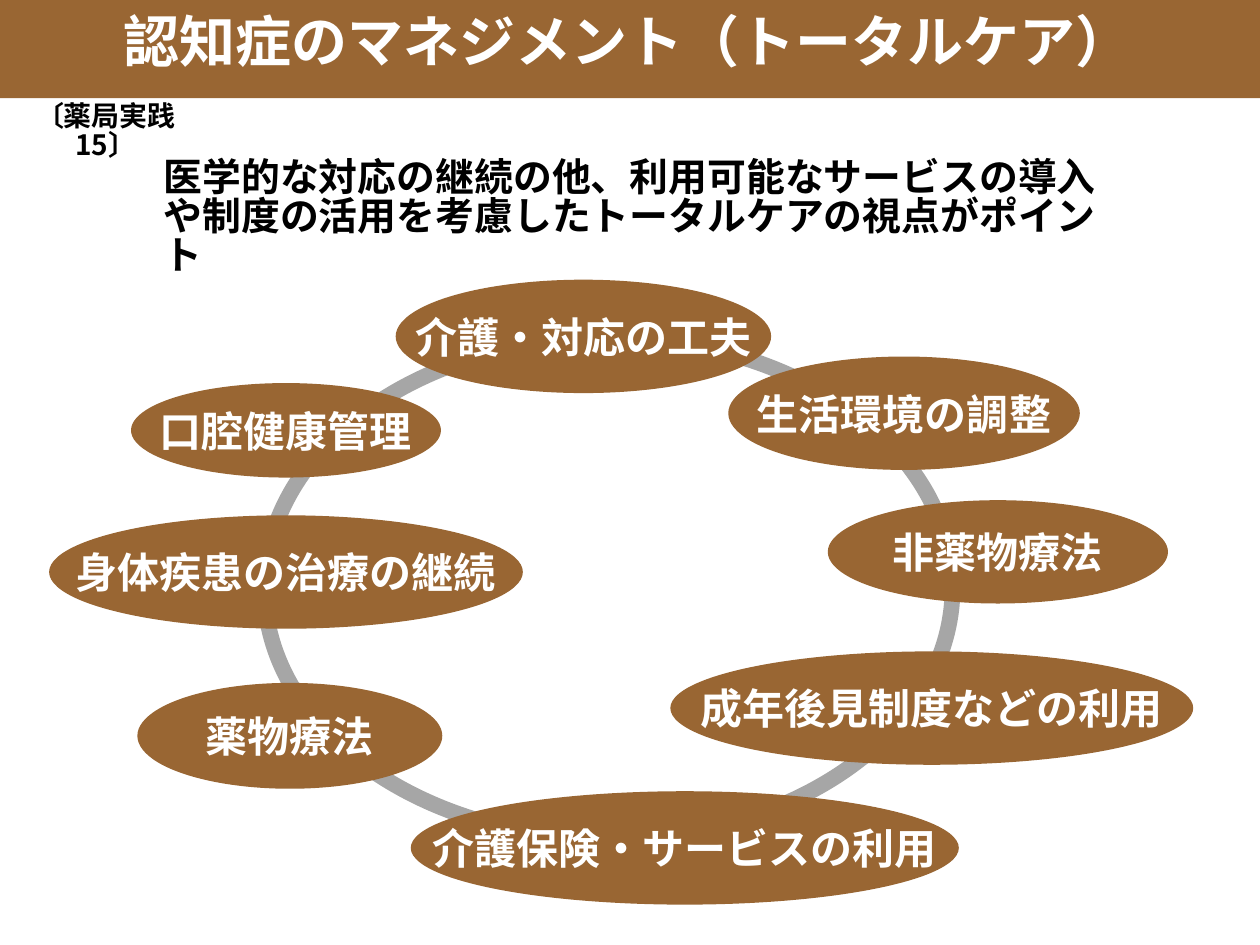
"""Build the dementia total care slide."""
from lxml.etree import SubElement
from pptx import Presentation
from pptx.dml.color import RGBColor
from pptx.enum.shapes import MSO_SHAPE
from pptx.enum.text import MSO_ANCHOR, MSO_AUTO_SIZE, PP_ALIGN
from pptx.oxml.ns import qn
from pptx.util import Inches, Pt

FONT = "Noto Sans CJK JP"
COLORS = {"brown": "996633", "gray": "A6A6A6", "white": "FFFFFF", "black": "000000"}
TITLE = "認知症のマネジメント（トータルケア）"
TAG = "〔薬局実践15〕"
LEAD = "医学的な対応の継続の他、利用可能なサービスの導入や制度の活用を考慮したトータルケアの視点がポイント"
BAND = (0, 0, 10, 0.78)
RING = (2.1, 2.68, 5.46, 3.98)
CARE = [
    ("生活環境の調整", (5.78, 2.83, 2.79, 0.9)),
    ("薬物療法", (1.09, 5.42, 2.42, 0.84)),
    ("介護保険・サービスの利用", (3.26, 6.28, 4.35, 0.9)),
    ("非薬物療法", (6.57, 3.97, 2.7, 0.82)),
    ("成年後見制度などの利用", (5.32, 5.17, 4.15, 0.9)),
    ("介護・対応の工夫", (3.14, 2.22, 2.98, 0.9)),
    ("身体疾患の治療の継続", (0.39, 4.09, 3.76, 0.9)),
    ("口腔健康管理", (1.04, 3.04, 2.46, 0.75)),
]


def rgb(name):
    return RGBColor.from_string(COLORS[name])


def inches(box):
    return [Inches(v) for v in box]


def add_shape(s, kind, box, fill, line=None):
    sp = s.shapes.add_shape(kind, *inches(box))
    sp.shadow.inherit = False
    sp.fill.solid()
    sp.fill.fore_color.rgb = rgb(fill)
    if line:
        sp.line.color.rgb = rgb(line)
        sp.line.width = Pt(9)
    else:
        sp.line.fill.background()
    return sp


def write(sp, text, size, color, align=PP_ALIGN.CENTER, anchor=MSO_ANCHOR.TOP, wrap=True, spacing=None):
    tf = sp.text_frame
    tf.text = text
    tf.word_wrap = wrap
    tf.vertical_anchor = anchor
    p = tf.paragraphs[0]
    p.alignment = align
    p.line_spacing = spacing
    p.font.size = Pt(size)
    p.font.bold = True
    p.font.name = FONT
    p.font.color.rgb = rgb(color)
    SubElement(p.font._element, qn("a:ea"), typeface=FONT)


def add_text(s, box, text, size, align):
    sp = s.shapes.add_textbox(*inches(box))
    write(sp, text, size, "black", align, spacing=0.84)
    sp.text_frame.auto_size = MSO_AUTO_SIZE.SHAPE_TO_FIT_TEXT


def main():
    prs = Presentation()
    prs.slide_width, prs.slide_height = Inches(10), Inches(7.5)
    s = prs.slides.add_slide(prs.slide_layouts[5])

    add_shape(s, MSO_SHAPE.RECTANGLE, BAND, "brown")
    title = s.shapes.title
    title.left, title.top, title.width, title.height = inches((0.5, 0.07, 8.97, 0.64))
    write(title, TITLE, 32, "white", spacing=0.88)
    title.text_frame.auto_size = MSO_AUTO_SIZE.SHAPE_TO_FIT_TEXT
    s.shapes._spTree.append(title._element)

    add_shape(s, MSO_SHAPE.OVAL, RING, "white", "gray")
    for text, box in CARE:
        sp = add_shape(s, MSO_SHAPE.OVAL, box, "brown")
        write(sp, text, 24, "white", anchor=MSO_ANCHOR.MIDDLE, wrap=False)

    add_text(s, (1.2, 1.22, 7.71, 0.85), LEAD, 22.2, PP_ALIGN.LEFT)
    add_text(s, (0, 0.78, 1.68, 0.37), TAG, 16, PP_ALIGN.CENTER)
    prs.save("out.pptx")


if __name__ == "__main__":
    main()
